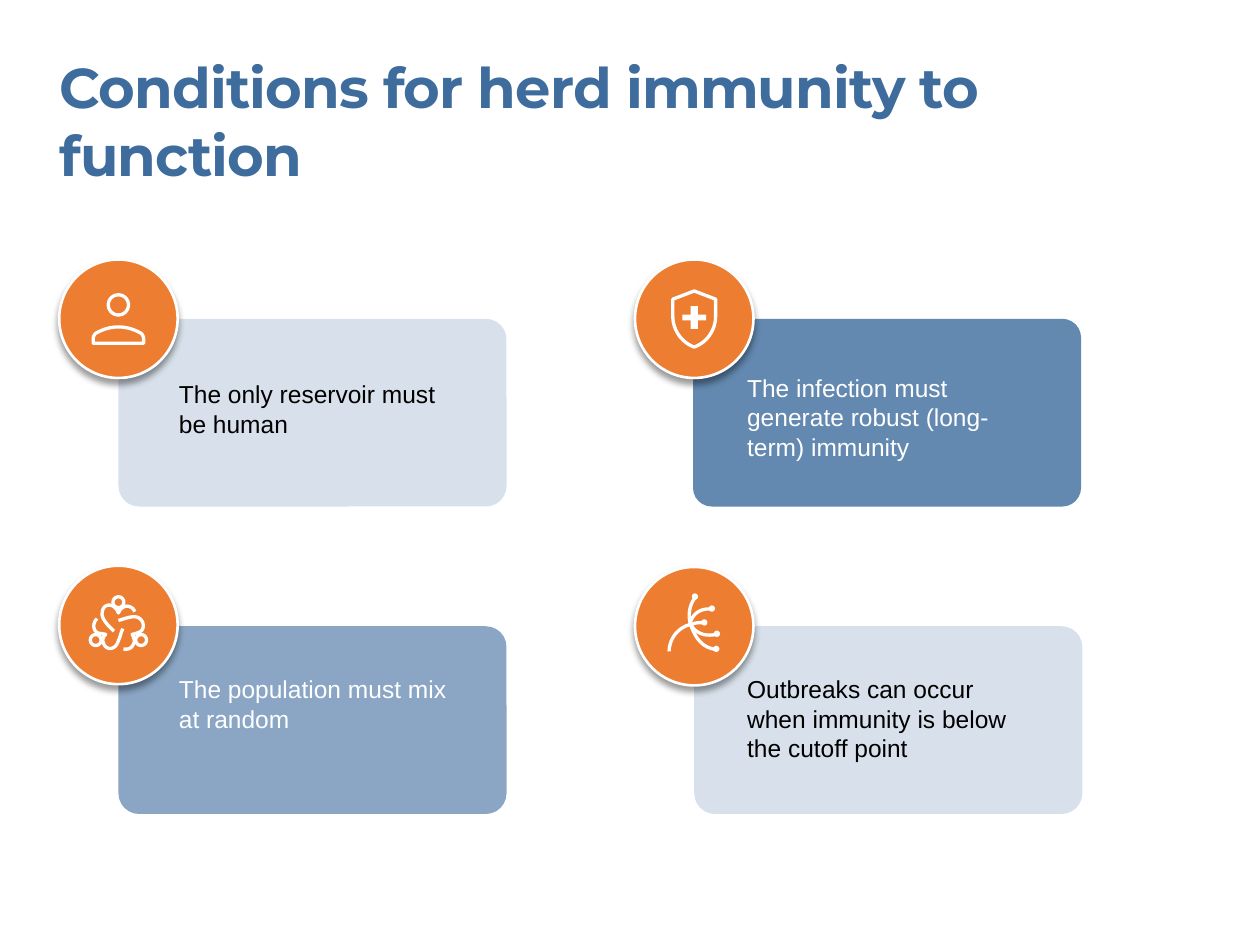
"""Build the slide on the conditions for herd immunity."""
from math import cos, pi, sin

from lxml.etree import SubElement
from pptx import Presentation
from pptx.dml.color import RGBColor
from pptx.enum.shapes import MSO_SHAPE as SHAPE
from pptx.enum.text import MSO_ANCHOR, PP_ALIGN
from pptx.oxml.ns import qn
from pptx.util import Inches, Pt

HEX = {"blue": "3D6C9D", "orange": "ED7D31", "white": "FFFFFF", "black": "000000"}
COLORS = {name: RGBColor.from_string(value) for name, value in HEX.items()}
CIRCLE = 0.94
STEPS = 12

PERSON = {
    "rings": [(0, -11, 8)],
    "strokes": [
        [(-20, 19.5), (-20, 16), (-20, 14, -19, 12, -17, 11), (-6, 5, 6, 5, 17, 11),
         (19, 12, 20, 14, 20, 16), (20, 19.5), (-20, 19.5)],
    ],
}
SHIELD = {
    "strokes": [
        [(0, -22), (17, -15.5), (17, -2), (17, 9, 10, 19, 0, 22.5),
         (-10, 19, -17, 9, -17, -2), (-17, -15.5), (0, -22)],
    ],
    "cross": (0.19, 0.18),
}
PEOPLE = {
    "rings": [(0, -18, 4.3), (-18, 12, 4.3), (18, 12, 4.3)],
    "strokes": [
        [(-3.5, 5), (-9, 0, -13, -5, -13, -8.5), (-13, -18, -3, -18, 0, -9.5),
         (3, -17, 11, -16, 13, -10.5)],
        [(-17, -5), (-21, -1, -20, 5, -16, 6.5), (-10, 7.5), (-12, 9, -13, 12, -12, 14),
         (-10, 21, -2, 20, 0, 12.5), (2, 8, 2, 6, 3.5, 3)],
        [(0, -3.5), (5, -5, 9, -6.5, 12.5, -6.5), (20, -6.5, 22, 3, 17, 5.5),
         (15, 6.5, 13, 7, 11, 7.5), (13, 12, 13, 13, 12, 15), (11, 18, 8, 20, 4, 19)],
    ],
}
BRANCHES = {
    "dots": [(1, -23), (14.5, -13.5), (8.5, -2.5), (18.5, 6.5), (18, 18.5)],
    "strokes": [
        [(-20, 20), (-19.5, 8, -11, 0, -2, -1.5), (2, -3, 5, -3, 8, -2.5)],
        [(1, -23), (-5, -16, -5, -5, -2, 1), (2, 12, 9, 18, 18, 18.5)],
        [(-3, -3), (-1, -10, 5, -14.5, 14, -13.5)],
        [(-2, 0), (3, 7, 10, 8, 18, 6.5)],
    ],
}
CARDS = [
    ("The only reservoir must be human", "black", 20,
     (0.94, 2.53), (0.94, 2.53), (1.42, 3.01), PERSON),
    ("The infection must generate robust (long-term) immunity", "white", 80,
     (5.5, 2.53), (5.51, 2.53), (5.93, 2.96), SHIELD),
    ("The population must mix at random", "white", 60,
     (0.94, 4.97), (0.94, 4.96), (1.42, 5.35), PEOPLE),
    ("Outbreaks can occur when immunity is below the cutoff point", "black", 20,
     (5.51, 4.97), (5.51, 4.97), (5.93, 5.35), BRANCHES),
]

deck = Presentation()
deck.slide_width, deck.slide_height = Inches(10), Inches(7.5)
page = deck.slides.add_slide(deck.slide_layouts[5])


def add_plain(kind, left, top, width, height, fill):
    shape = page.shapes.add_shape(
        kind, Inches(left), Inches(top), Inches(width), Inches(height))
    shape.shadow.inherit = False
    shape.fill.solid()
    shape.fill.fore_color.rgb = COLORS[fill]
    shape.line.fill.background()
    return shape


def write(box, text, font, size, color):
    frame = box.text_frame
    frame.word_wrap = True
    frame.vertical_anchor = MSO_ANCHOR.TOP
    frame.margin_left = frame.margin_right = frame.margin_top = frame.margin_bottom = 0
    frame.text = text
    frame.paragraphs[0].alignment = PP_ALIGN.LEFT
    span = frame.paragraphs[0].runs[0]
    span.font.name, span.font.size = font, Pt(size)
    span.font.color.rgb = COLORS[color]
    return span


title = page.shapes.title
title.left, title.top = Inches(0.47), Inches(0.42)
title.width, title.height = Inches(8.55), Inches(1.08)
heading = write(title, "Conditions for herd immunity to function", "Montserrat", 32, "blue")
heading.font.bold = True
heading.font._element.set("spc", "-50")

for text, color, opacity, corner, center, text_corner, icon in CARDS:
    card = add_plain(SHAPE.ROUNDED_RECTANGLE, *corner, 3.08, 1.49, "blue")
    card.adjustments[0] = 0.1 if icon is SHIELD else 0.11
    tint = card._element.spPr.find(".//" + qn("a:srgbClr"))
    SubElement(tint, qn("a:alpha"), val=str(opacity * 1000))

    left, top = center
    badge = add_plain(SHAPE.OVAL, left - CIRCLE / 2, top - CIRCLE / 2, CIRCLE, CIRCLE, "orange")
    badge.line.color.rgb = COLORS["white"]
    badge.line.width = Pt(1.5)
    effects = badge._element.spPr.find(qn("a:effectLst"))
    shadow = SubElement(effects, qn("a:outerShdw"), blurRad=str(Pt(4)), dist=str(Pt(3)),
                        dir="5400000", rotWithShape="0")
    shade = SubElement(shadow, qn("a:srgbClr"), val=HEX["black"])
    SubElement(shade, qn("a:alpha"), val="40000")

    text_left, text_top = text_corner
    box = page.shapes.add_textbox(
        Inches(text_left), Inches(text_top), Inches(2.24), Inches(0.71))
    write(box, text, "Arial", 14, color)

    contours = []
    for stroke in icon["strokes"]:
        points = [stroke[0]]
        for part in stroke[1:]:
            if len(part) == 2:
                points.append(part)
                continue
            controls = points[-1] + part
            for step in range(1, STEPS + 1):
                t = step / STEPS
                weights = ((1 - t) ** 3, 3 * t * (1 - t) ** 2, 3 * t * t * (1 - t), t ** 3)
                points.append(tuple(
                    sum(w * c for w, c in zip(weights, controls[axis::2]))
                    for axis in (0, 1)))
        contours.append((points, stroke[0] == stroke[-1]))
    for x, y, radius in icon.get("rings", []):
        angles = [2 * pi * step / (3 * STEPS) for step in range(3 * STEPS)]
        contours.append(([(x + radius * cos(a), y + radius * sin(a)) for a in angles], True))

    builder = page.shapes.build_freeform(scale=Inches(1) / 10000)
    for points, closed in contours:
        scaled = [(x * 100, y * 100) for x, y in points]
        builder.move_to(*scaled[0])
        builder.add_line_segments(scaled[1:], close=closed)
    outline = builder.convert_to_shape(Inches(left), Inches(top))
    outline.shadow.inherit = False
    outline.fill.background()
    outline.line.color.rgb = COLORS["white"]
    outline.line.width = Pt(1.9)

    for x, y in icon.get("dots", []):
        add_plain(SHAPE.OVAL, left + x / 100 - 0.03, top + y / 100 - 0.03,
                  0.05, 0.05, "white")
    if "cross" in icon:
        width, height = icon["cross"]
        cross = add_plain(SHAPE.CROSS, left - width / 2, top - height / 2 - 0.01,
                          width, height, "white")
        cross.adjustments[0] = 0.37

deck.save("out.pptx")
